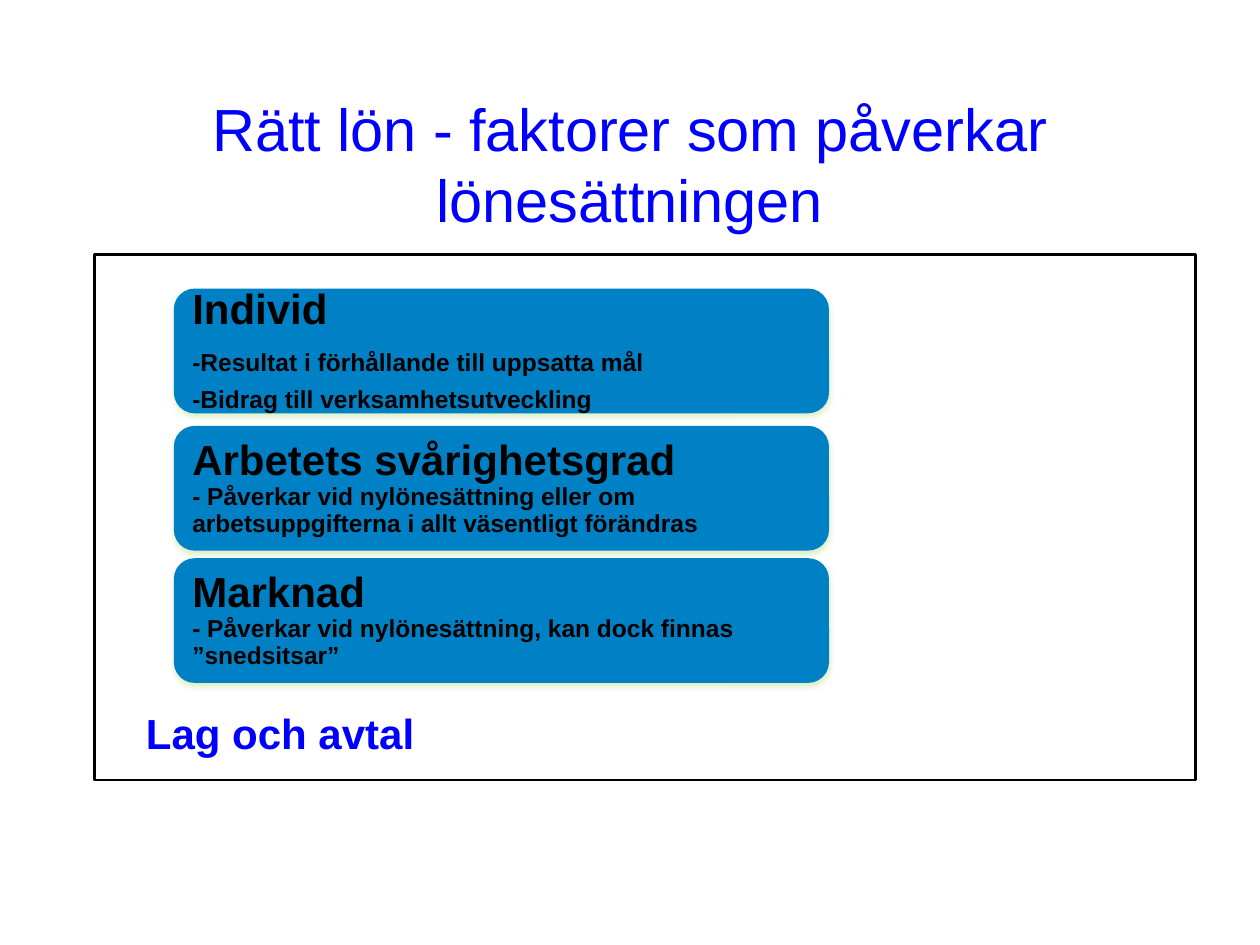
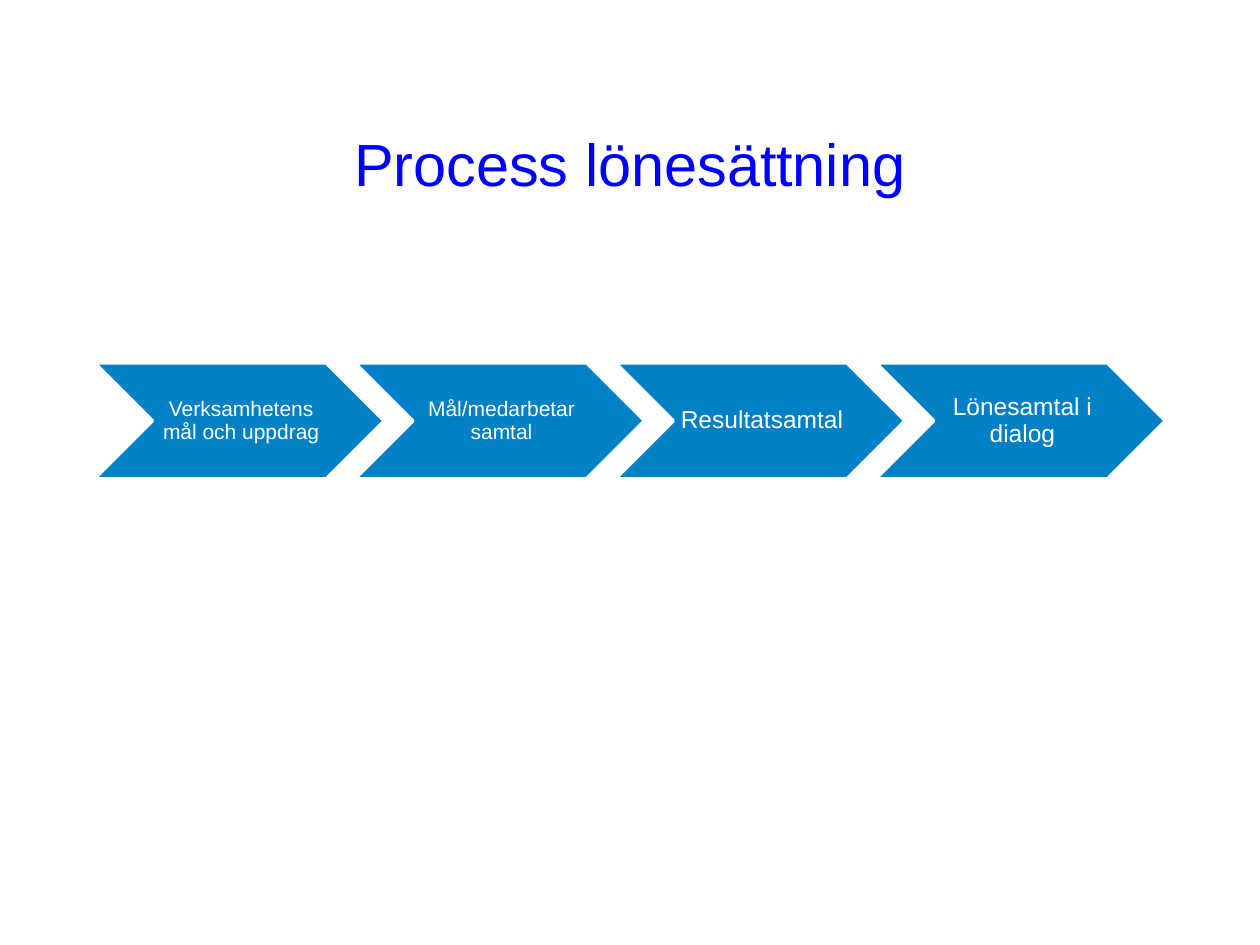
from dataclasses import dataclass

from lxml.etree import SubElement
from pptx import Presentation
from pptx.dml.color import RGBColor as RGB
from pptx.enum.shapes import MSO_SHAPE as SHAPE
from pptx.enum.text import MSO_ANCHOR as ANCHOR, PP_ALIGN as ALIGN
from pptx.oxml.ns import qn
from pptx.util import Inches, Pt


@dataclass(frozen=True)
class Theme:
    """Colours and type sizes shared by the slides."""
    font: str = "Arial"
    accent: RGB = RGB(0x00, 0x00, 0xFF)
    fill: RGB = RGB(0x00, 0x81, 0xC5)
    ink: RGB = RGB(0x00, 0x00, 0x00)
    paper: RGB = RGB(0xFF, 0xFF, 0xFF)
    glow: str = "9ED561"
    title: int = 34
    heading: int = 24
    body: int = 14
    small: int = 12
    leading: float = 0.9


T = Theme()
TITLE_BOX = (0.75, 0.67, 8.5, 1.25)
FRAME_BOX = (0.75, 2.02, 8.74, 4.17)
CHAIN_BOX = (0.75, 2.88, 8.5, 0.92)

FACTORS = [
    (0.27, "Individ", ["-Resultat i förhållande till uppsatta mål",
                       "-Bidrag till verksamhetsutveckling"], True),
    (1.36, "Arbetets svårighetsgrad",
     ["- Påverkar vid nylönesättning eller om arbetsuppgifterna i allt väsentligt förändras"], False),
    (2.41, "Marknad",
     ["- Påverkar vid nylönesättning, kan dock finnas ”snedsitsar”"], False),
]
STEPS = [
    ("Verksamhetens mål och uppdrag", T.small),
    ("Mål/medarbetar samtal", T.small),
    ("Resultatsamtal", T.body),
    ("Lönesamtal i dialog", T.body),
]


def inches(box):
    """Convert a box given in inches to lengths."""
    return [Inches(v) for v in box]


def style(font, size, color, bold=False):
    """Apply the theme font with a size, colour and weight."""
    font.name, font.size, font.bold = T.font, Pt(size), bold
    font.color.rgb = color


def add_label(s, box, text, size, color, bold=False, align=ALIGN.LEFT, anchor=ANCHOR.TOP, wrap=True):
    """Add a text box with one paragraph."""
    tf = s.shapes.add_textbox(*inches(box)).text_frame
    tf.word_wrap, tf.vertical_anchor = wrap, anchor
    p = tf.paragraphs[0]
    p.text, p.alignment = text, align
    style(p.font, size, color, bold)


def add_block(s, kind, box, margins):
    """Add a filled preset shape with middle-anchored text."""
    sp = s.shapes.add_shape(kind, *inches(box))
    sp.shadow.inherit = False
    sp.fill.solid()
    sp.fill.fore_color.rgb = T.fill
    tf = sp.text_frame
    tf.word_wrap, tf.vertical_anchor = True, ANCHOR.MIDDLE
    tf.margin_left, tf.margin_top, tf.margin_right, tf.margin_bottom = inches(margins)
    return sp


def add_glow(sp):
    """Give a shape a soft coloured shadow straight below it."""
    effects = sp._element.spPr.find(qn("a:effectLst"))
    shadow = SubElement(effects, qn("a:outerShdw"), blurRad=str(Pt(3.1)), dist=str(Pt(1.8)),
                        dir="5400000", rotWithShape="0")
    color = SubElement(shadow, qn("a:srgbClr"), val=T.glow)
    SubElement(color, qn("a:alpha"), val="35000")


def add_factor(s, box, heading, details, separate):
    """Add a card with a heading and its details, as separate paragraphs or broken lines."""
    sp = add_block(s, SHAPE.ROUNDED_RECTANGLE, box, (0.1,) * 4)
    sp.line.fill.background()
    add_glow(sp)
    tf = sp.text_frame
    p = tf.paragraphs[0]
    for i, (text, size) in enumerate([(heading, T.heading)] + [(d, T.body) for d in details]):
        if i and separate:
            p.space_after = Pt(0.4 * p.runs[0].font.size.pt)
            p = tf.add_paragraph()
        elif i:
            p.add_line_break()
        p.alignment, p.line_spacing = ALIGN.LEFT, T.leading
        r = p.add_run()
        r.text = text
        style(r.font, size, T.ink, True)


def add_factors(s, box):
    """Place the factor cards, the frame around them and the frame's label."""
    x, y, _, _ = box
    for dy, heading, details, separate in FACTORS:
        add_factor(s, (x + 0.63, y + dy, 5.2, 0.99), heading, details, separate)
    frame = s.shapes.add_shape(SHAPE.RECTANGLE, *inches(box))
    frame.shadow.inherit = False
    frame.fill.background()
    frame.line.color.rgb, frame.line.width = T.ink, Pt(1.5)
    add_label(s, (x + 0.31, y + 3.55, 2.35, 0.5), "Lag och avtal", T.heading, T.accent, True, wrap=False)


def add_chain(s, box):
    """Spread the process steps as overlapping chevrons across the box."""
    x, y, w, h = box
    step_w = 2.3
    pitch = (w - step_w) / (len(STEPS) - 1)
    for i, (text, size) in enumerate(STEPS):
        sp = add_block(s, SHAPE.CHEVRON, (x + i * pitch, y, step_w, h), (0.05, 0.02, 0.02, 0.02))
        sp.line.color.rgb, sp.line.width = T.paper, Pt(2)
        p = sp.text_frame.paragraphs[0]
        p.text, p.alignment, p.line_spacing = text, ALIGN.CENTER, T.leading
        style(p.font, size, T.paper)


def add_slide(prs, title, add_content, box):
    """Add a blank slide with its title and content region."""
    s = prs.slides.add_slide(prs.slide_layouts[6])
    add_label(s, TITLE_BOX, title, T.title, T.accent, align=ALIGN.CENTER, anchor=ANCHOR.MIDDLE)
    add_content(s, box)


def main():
    """Build and save the presentation."""
    prs = Presentation()
    prs.slide_width, prs.slide_height = Inches(10), Inches(7.5)
    add_slide(prs, "Rätt lön - faktorer som påverkar lönesättningen", add_factors, FRAME_BOX)
    add_slide(prs, "Process lönesättning", add_chain, CHAIN_BOX)
    prs.save("out.pptx")


if __name__ == "__main__":
    main()
